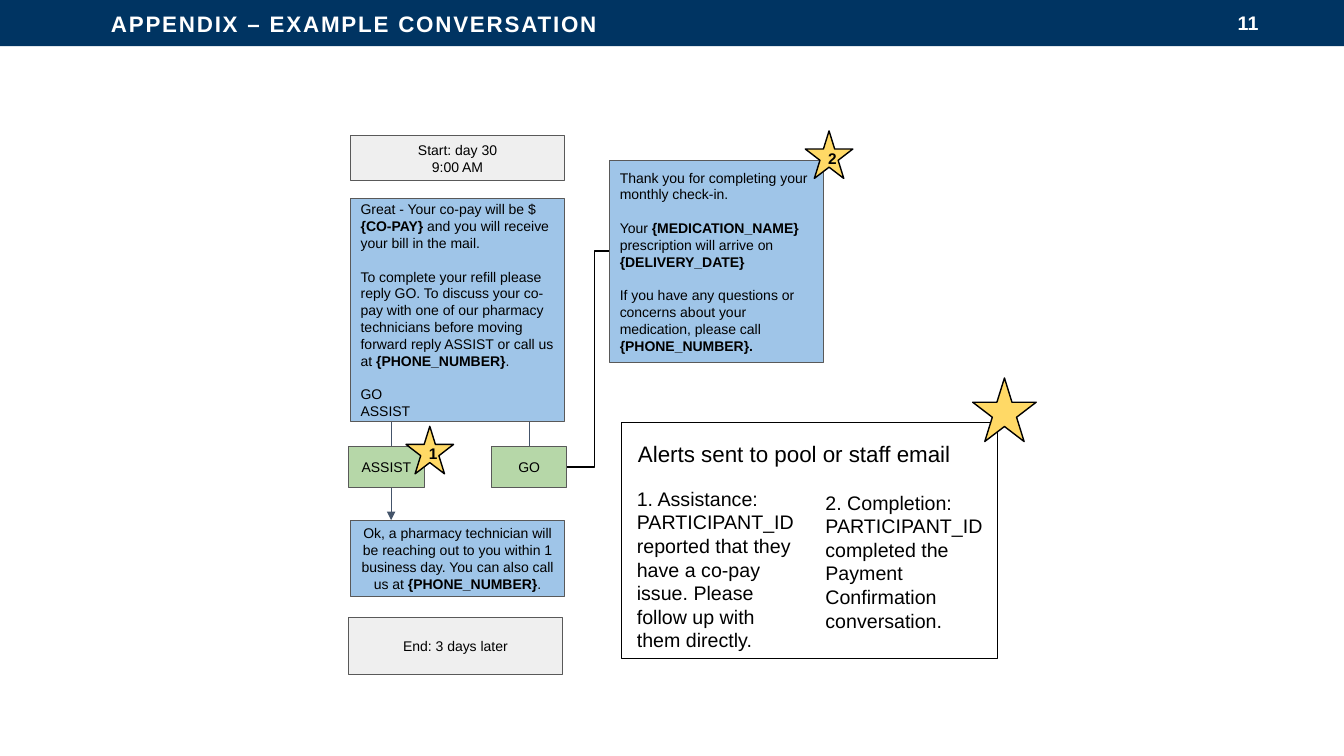
from dataclasses import dataclass
from lxml.etree import SubElement
from pptx import Presentation
from pptx.dml.color import RGBColor as Rgb
from pptx.enum.shapes import MSO_CONNECTOR as Link, MSO_SHAPE as Form
from pptx.enum.text import MSO_ANCHOR as Anchor, PP_ALIGN as Align
from pptx.oxml.ns import qn
from pptx.util import Pt


@dataclass(frozen=True)
class Theme:
    navy: str = "003462"
    white: str = "FFFFFF"
    black: str = "000000"
    slate: str = "44546A"
    edge: str = "595959"
    gray: str = "EFEFEF"
    blue: str = "9FC5E8"
    green: str = "B6D7A8"
    gold: str = "FFD966"
    font: str = "Arial"
    small: float = 10
    badge: float = 11
    body: float = 14
    head: float = 16
    gap: float = 12


T = Theme()


# Basic parts
def write(frame, paras, size, color=T.black, bold=False, align=Align.LEFT,
          anchor=Anchor.MIDDLE, pad=3.6, gap=0, track=0):
    """Each paragraph is a list of runs; runs that open with a brace are bold."""
    frame.word_wrap = True
    frame.vertical_anchor = anchor
    frame.margin_left = frame.margin_right = Pt(7.2)
    frame.margin_top = frame.margin_bottom = Pt(pad)
    for i, runs in enumerate(paras):
        para = frame.add_paragraph() if i else frame.paragraphs[0]
        para.alignment = align
        para.space_before = Pt(gap if i else 0)
        for text in runs:
            run = para.add_run()
            run.text = text
            font = run.font
            font.name, font.size = T.font, Pt(size)
            font.bold = bold or text.startswith("{")
            font.color.rgb = Rgb.from_string(color)
            if track:
                font._element.set("spc", str(track))


def draw(slide, form, box, fill=None, line=None, width=0.75):
    shape = slide.shapes.add_shape(form, *map(Pt, box))
    shape.shadow.inherit = False
    if fill:
        shape.fill.solid()
        shape.fill.fore_color.rgb = Rgb.from_string(fill)
    else:
        shape.fill.background()
    if line:
        shape.line.color.rgb = Rgb.from_string(line)
        shape.line.width = Pt(width)
    else:
        shape.line.fill.background()
    return shape


def node(slide, box, fill, paras, align=Align.CENTER, gap=0):
    shape = draw(slide, Form.RECTANGLE, box, fill, T.edge)
    write(shape.text_frame, paras, T.small, align=align, pad=7.2, gap=gap)
    return shape


def star(slide, x, y, side, label=""):
    shape = draw(slide, Form.STAR_5_POINT, (x, y, side, side), T.gold, T.black, 1)
    if label:
        write(shape.text_frame, [[label]], T.badge, bold=True, align=Align.CENTER)


def label(slide, box, text, size, **style):
    frame = slide.shapes.add_textbox(*map(Pt, box)).text_frame
    write(frame, [[text]], size, **style)


def link(slide, kind, ends, color, width=0.75, arrow=False):
    wire = slide.shapes.add_connector(kind, *map(Pt, ends))
    wire.line.color.rgb = Rgb.from_string(color)
    wire.line.width = Pt(width)
    if arrow:
        SubElement(wire.line._get_or_add_ln(), qn("a:tailEnd"), type="triangle")
    SubElement(wire._element.spPr, qn("a:effectLst"))


# Title band with page number
def banner(slide, box):
    x, y, w, h = box
    bar = draw(slide, Form.RECTANGLE, box, T.navy)
    write(bar.text_frame, [["APPENDIX – EXAMPLE CONVERSATION"]], T.head,
          T.white, bold=True, track=130)
    bar.text_frame.margin_left = Pt(79.2)
    label(slide, (x + 690, y + 1.5, 216, 29), "11", T.body, color=T.white,
          bold=True, align=Align.RIGHT)


# Message flow
def flow(slide, box):
    x, y, w, h = box
    wide, tall = 152.6, 29
    left, right = x + 1.5, x + w - wide
    ask, reply, help_y = y + 45, y + 222, y + 274.5
    mid, go = x + 30.4, x + 102.4

    # Links lie behind the boxes
    link(slide, Link.STRAIGHT, (go + 26.6, ask + 159, go + 26.6, reply), T.slate, 1)
    link(slide, Link.STRAIGHT, (mid, ask + 159, mid, reply), T.slate)
    link(slide, Link.ELBOW, (go + 53.3, reply + 14.5, right + 9.4, y + 82.3),
         T.black, 1)
    link(slide, Link.STRAIGHT, (mid, reply + tall, mid, help_y), T.slate, arrow=True)

    # Left column
    node(slide, (left, y, wide, 32), T.gray, [["Start: day 30"], ["9:00 AM"]])
    prompt = node(slide, (left, ask, wide, 159), T.blue, [
        ["Great - Your co-pay will be $", "{CO-PAY} ",
         "and you will receive your bill in the mail."],
        ["To complete your refill please reply GO. To discuss your co-pay with "
         "one of our pharmacy technicians before moving forward reply ASSIST "
         "or call us at ", "{PHONE_NUMBER}", "."],
        ["GO"], ["ASSIST"]], Align.LEFT, T.gap)
    prompt.text_frame.paragraphs[-1].space_before = Pt(0)
    node(slide, (go, reply, 53.3, tall), T.green, [["GO"]])
    node(slide, (x, reply, 54, tall), T.green, [["ASSIST"]])
    node(slide, (left, help_y, wide, 54.7), T.blue, [
        ["Ok, a pharmacy technician will be reaching out to you within 1 "
         "business day. You can also call us at ", "{PHONE_NUMBER}", "."]])
    node(slide, (x, y + h - 41, wide, 41), T.gray, [["End: 3 days later"]])

    # Closing message
    node(slide, (right, y + 17.5, wide, 144.7), T.blue, [
        ["Thank you for completing your monthly check-in."],
        ["Your ", "{MEDICATION_NAME} ", "prescription will arrive on ",
         "{DELIVERY_DATE}"],
        ["If you have any questions or concerns about your medication, "
         "please call ", "{PHONE_NUMBER}."]], Align.LEFT, T.gap)

    # Alert marks
    star(slide, x + 41, reply - 14.5, 34, "1")
    star(slide, x + w - 13, y - 3.5, 34, "2")


# Alert legend
def alerts(slide, box):
    x, y, w, h = box
    draw(slide, Form.RECTANGLE, box, line=T.black)
    label(slide, (x + 4.4, y + 9.4, 260.6, 26.6),
          "Alerts sent to pool or staff email", T.head, anchor=Anchor.TOP)
    label(slide, (x + 3.6, y + 42.5, 130.3, 126),
          "1. Assistance: PARTICIPANT_ID reported that they have a co-pay issue. "
          "Please follow up with them directly.", T.body, anchor=Anchor.TOP)
    label(slide, (x + w - 130.3, y + 45.3, 130.3, 108.7),
          "2. Completion: PARTICIPANT_ID completed the Payment Confirmation "
          "conversation.", T.body, anchor=Anchor.TOP)
    star(slide, x + w - 18, y - 31.7, 45.4)


def main():
    deck = Presentation()
    deck.slide_width, deck.slide_height = Pt(960), Pt(540)
    slide = deck.slides.add_slide(deck.slide_layouts[6])
    banner(slide, (0, 0, 960, 33))
    flow(slide, (249, 97, 339.2, 385))
    alerts(slide, (444.2, 301.7, 268.6, 168.5))
    deck.save("out.pptx")


if __name__ == "__main__":
    main()
